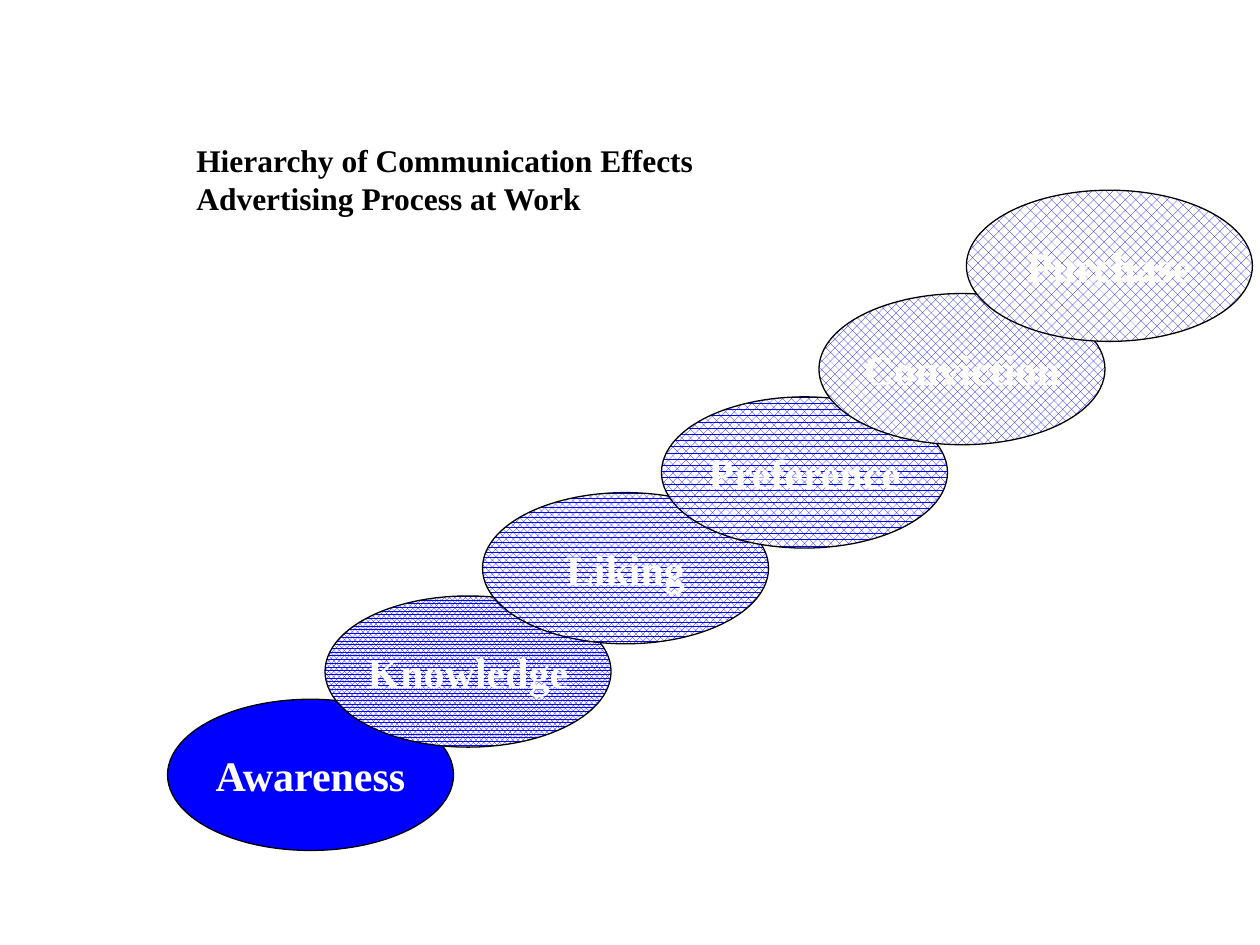
from pptx import Presentation
from pptx import util as u
from pptx.dml.color import RGBColor
from pptx.enum import dml, shapes, text

FONT = "Times New Roman"
BLUE, WHITE, BLACK = "0000FF", "FFFFFF", "000000"
STAGE_WIDTH, STAGE_HEIGHT = 2.27, 1.2

# Stage name, left, top, fill density in percent (100 is solid)
STAGES = [
    ("Awareness", 1.33, 5.55, 100),
    ("Knowledge", 2.58, 4.73, 80),
    ("Liking", 3.83, 3.91, 75),
    ("Preference", 5.25, 3.15, 70),
    ("Conviction", 6.5, 2.33, 50),
    ("Purchase", 7.67, 1.51, 40),
]


def color(hex_string):
    return RGBColor.from_string(hex_string)


def set_font(paragraph, size, hex_string):
    font = paragraph.font
    font.name, font.size, font.bold = FONT, u.Pt(size), True
    font.color.rgb = color(hex_string)


def add_title(slide, lines, left, top, width, height):
    box = slide.shapes.add_textbox(*map(u.Inches, (left, top, width, height)))
    frame = box.text_frame
    frame.word_wrap = True
    frame.auto_size = text.MSO_AUTO_SIZE.SHAPE_TO_FIT_TEXT
    frame.text = "\n".join(lines)
    for paragraph in frame.paragraphs:
        set_font(paragraph, 18, BLACK)


def add_stage(slide, name, density, left, top, width, height):
    stage = slide.shapes.add_shape(
        shapes.MSO_SHAPE.OVAL, *map(u.Inches, (left, top, width, height)))
    stage.shadow.inherit = False

    # Fill and outline
    if density == 100:
        stage.fill.solid()
    else:
        stage.fill.patterned()
        stage.fill.pattern = dml.MSO_PATTERN_TYPE.from_xml(f"pct{density}")
        stage.fill.back_color.rgb = color(WHITE)
    stage.fill.fore_color.rgb = color(BLUE)
    stage.line.color.rgb = color(BLACK)
    stage.line.width = u.Pt(0.75)

    # Label
    frame = stage.text_frame
    frame.word_wrap = False
    frame.vertical_anchor = text.MSO_ANCHOR.MIDDLE
    frame.text = name
    paragraph = frame.paragraphs[0]
    paragraph.alignment = text.PP_ALIGN.CENTER
    set_font(paragraph, 24, WHITE)


def main():
    presentation = Presentation()
    presentation.slide_width = u.Inches(10)
    presentation.slide_height = u.Inches(7.5)
    slide = presentation.slides.add_slide(presentation.slide_layouts[6])

    add_title(slide, ["Hierarchy of Communication Effects",
                      "Advertising Process at Work"], 1.46, 1.07, 5, 0.7)
    for name, left, top, density in STAGES:
        add_stage(slide, name, density, left, top, STAGE_WIDTH, STAGE_HEIGHT)

    presentation.save("out.pptx")


if __name__ == "__main__":
    main()
